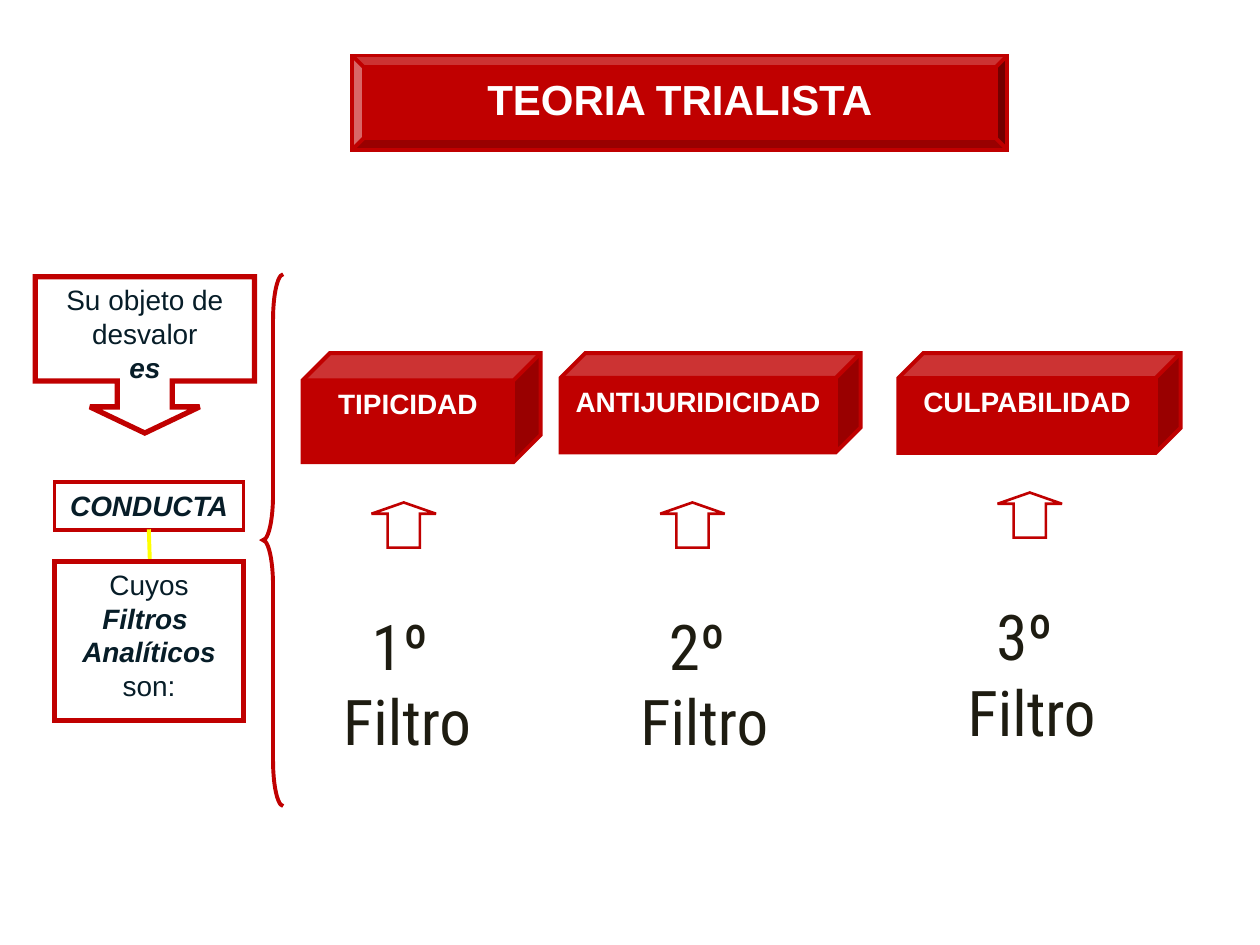
"""Build the slide on the three-filter theory of crime."""
from dataclasses import dataclass

from pptx import Presentation
from pptx.dml.color import RGBColor
from pptx.enum.shapes import MSO_CONNECTOR, MSO_SHAPE
from pptx.enum.text import MSO_ANCHOR, PP_ALIGN
from pptx.oxml.ns import qn
from pptx.util import Cm, Pt

BEVEL, CUBE, RECT = MSO_SHAPE.BEVEL, MSO_SHAPE.CUBE, MSO_SHAPE.RECTANGLE
CALLOUT, BRACE = MSO_SHAPE.DOWN_ARROW_CALLOUT, MSO_SHAPE.LEFT_BRACE
ARROW = MSO_SHAPE.UP_ARROW
STRAIGHT = MSO_CONNECTOR.STRAIGHT
TOP = MSO_ANCHOR.TOP
CENTER = PP_ALIGN.CENTER

RED, WHITE, YELLOW, NAVY, DARK = "C00000", "FFFFFF", "FFFF00", "071D28", "1E1C11"


@dataclass
class Box:
    left: float
    top: float
    width: float
    height: float

    def sides(self) -> list:
        return [Cm(n) for n in (self.left, self.top, self.width, self.height)]


@dataclass
class Run:
    text: str
    strong: bool = False


@dataclass
class Style:
    size: int
    color: str
    font: str = "Arial"
    bold: bool = False


@dataclass
class Filter:
    name: str
    order: str
    cube: Box
    arrow: Box
    label: Box


HEAD = Style(24, WHITE, bold=True)
NAME = Style(16, WHITE, bold=True)
BODY = Style(16, NAVY)
LABEL = Style(36, DARK, "Roboto Condensed")

FILTERS = [
    Filter("TIPICIDAD", "1º ", Box(6.1, 7.12, 4.8, 2.2),
           Box(7.49, 10.13, 1.3, 0.91), Box(6.71, 12.12, 3, 3)),
    Filter("ANTIJURIDICIDAD", "2º ", Box(11.3, 7.12, 6.05, 2),
           Box(13.31, 10.13, 1.3, 0.91), Box(12.7, 12.12, 3, 3)),
    Filter("CULPABILIDAD", "3º ", Box(18.11, 7.12, 5.69, 2.01),
           Box(20.11, 9.93, 1.3, 0.91), Box(19.3, 11.92, 3, 3)),
]


def tint(code: str) -> RGBColor:
    return RGBColor.from_string(code)


def write(frame, lines: list[list[Run]], style: Style, wrap: bool = True) -> None:
    frame.word_wrap = wrap
    frame.vertical_anchor = TOP
    if not wrap:
        frame.margin_left = frame.margin_right = Cm(0)
    for i, line in enumerate(lines):
        para = frame.add_paragraph() if i else frame.paragraphs[0]
        para.alignment = CENTER
        font = para.font
        font.name, font.size = style.font, Pt(style.size)
        font.color.rgb = tint(style.color)
        font.bold = style.bold
        for part in line:
            run = para.add_run()
            run.text = part.text
            if part.strong:
                run.font.bold = run.font.italic = True


def draw(slide, kind, box: Box, weight: float, fill: str = "", adjust: tuple = ()):
    shape = slide.shapes.add_shape(kind, *box.sides())
    shape.shadow.inherit = False
    for i, value in enumerate(adjust):
        shape.adjustments[i] = value
    if fill:
        shape.fill.solid()
        shape.fill.fore_color.rgb = tint(fill)
    else:
        shape.fill.background()
    shape.line.color.rgb = tint(RED)
    shape.line.width = Pt(weight)
    edge = shape._element.spPr.find(qn("a:ln"))
    edge.append(edge.makeelement(qn("a:miter"), {"lim": "800000"}))
    return shape


def link(slide, start: tuple, end: tuple) -> None:
    line = slide.shapes.add_connector(STRAIGHT, *map(Cm, start + end))
    line.line.color.rgb = tint(YELLOW)
    line.line.width = Pt(2.25)
    props = line._element.spPr
    props.append(props.makeelement(qn("a:effectLst"), {}))


def stage(slide, item: Filter) -> None:
    cube = draw(slide, CUBE, item.cube, 2.25, RED, (0.25,))
    write(cube.text_frame, [[Run(item.name)]], NAME)
    draw(slide, ARROW, item.arrow, 1.5, adjust=(0.5, 0.25))
    label = slide.shapes.add_textbox(*item.label.sides())
    write(label.text_frame, [[Run(item.order)], [Run("Filtro")]], LABEL, False)


def main() -> None:
    deck = Presentation()
    deck.slide_width, deck.slide_height = Cm(25.4), Cm(19.05)
    slide = deck.slides.add_slide(deck.slide_layouts[6])

    title = draw(slide, BEVEL, Box(7.1, 1.12, 13.21, 1.9), 2.25, RED, (0.125,))
    write(title.text_frame, [[Run("TEORIA TRIALISTA")]], HEAD)

    aim = draw(slide, CALLOUT, Box(0.71, 5.58, 4.42, 3.15), 3,
               adjust=(0.351, 0.351, 0.167, 0.667))
    write(aim.text_frame, [[Run("Su objeto de desvalor")], [Run("es", True)]], BODY)

    act = draw(slide, RECT, Box(1.1, 9.72, 3.81, 0.97), 2.25)
    write(act.text_frame, [[Run("CONDUCTA", True)]], BODY)
    link(slide, (3, 10.67), (3.02, 11.3))

    tests = draw(slide, RECT, Box(1.1, 11.32, 3.81, 3.2), 3)
    write(tests.text_frame, [[Run("Cuyos "), Run("Filtros ", True)],
                             [Run("Analíticos", True), Run(" son:")]], BODY)

    draw(slide, BRACE, Box(5.3, 5.53, 0.41, 10.72), 2.25, adjust=(2.248, 0.5))
    for item in FILTERS:
        stage(slide, item)
    deck.save("out.pptx")


if __name__ == "__main__":
    main()
